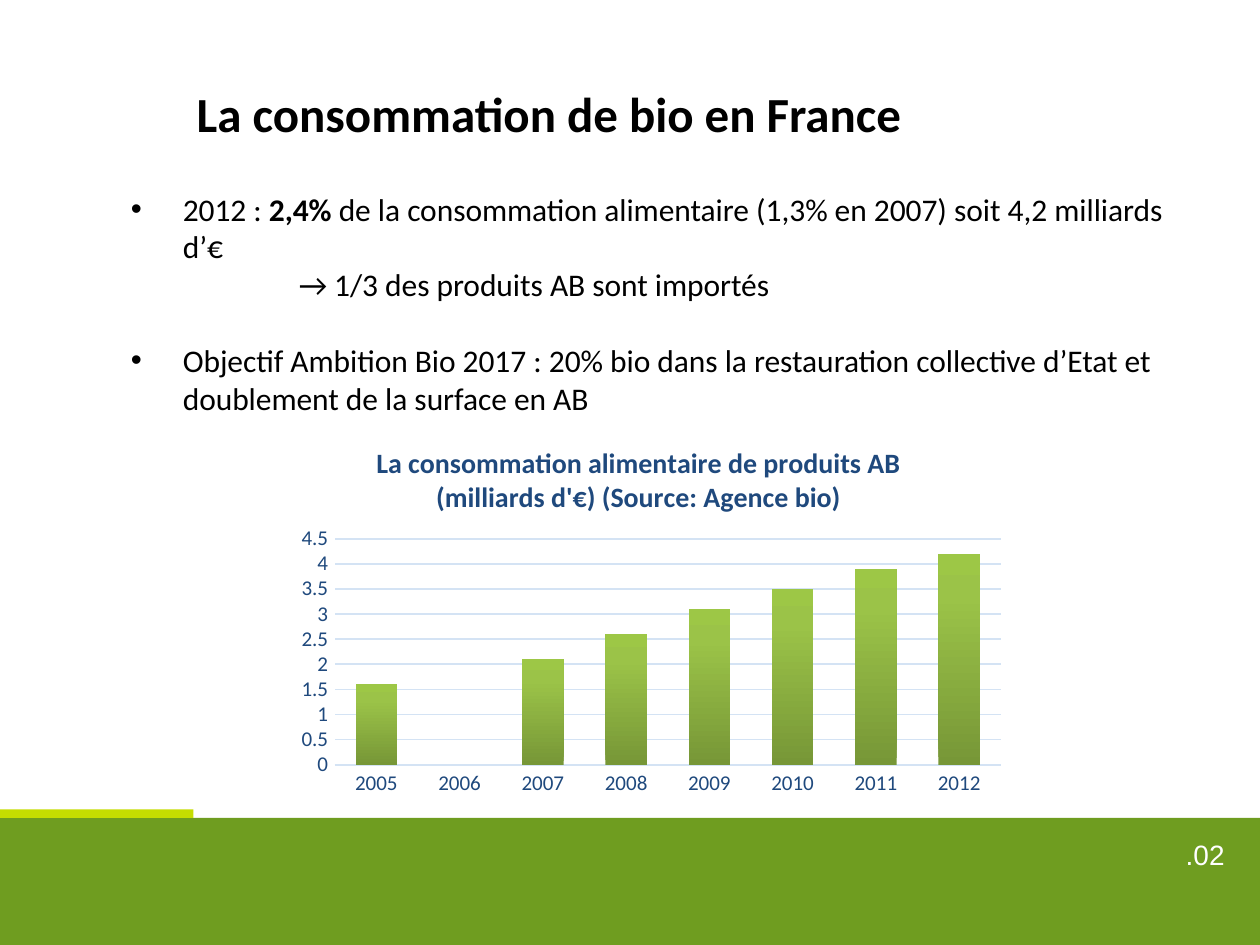
from copy import deepcopy
from dataclasses import dataclass

from lxml.etree import SubElement
from pptx import Presentation
from pptx.chart.data import CategoryChartData
from pptx.dml.color import RGBColor
from pptx.enum.chart import XL_CHART_TYPE, XL_TICK_MARK
from pptx.enum.shapes import MSO_SHAPE
from pptx.enum.text import PP_ALIGN
from pptx.oxml import parse_xml
from pptx.oxml.ns import nsdecls, qn
from pptx.util import Inches, Pt

SLIDE_WIDTH = Inches(7.5)
SLIDE_HEIGHT = SLIDE_WIDTH * 3 // 4


@dataclass(frozen=True)
class Theme:
    """Colours, fonts and type sizes of the slide."""
    text_font: str = "Calibri"
    number_font: str = "Arial"
    ink: str = "000000"
    paper: str = "FFFFFF"
    band: str = "6F9D20"
    accent: str = "C5DD01"
    chart_text: str = "1F497D"
    grid: str = "D4E3F4"
    bar_stops: tuple = ((0, "779737"), (0.8, "9BC348"), (1, "9DC746"))
    title_size: float = 21
    body_size: float = 13.5
    number_size: float = 12
    chart_title_size: float = 12
    axis_size: float = 9


THEME = Theme()


def place(left, top, width, height):
    """Turn percentages of the slide into a position and a size."""
    return (int(SLIDE_WIDTH * left / 100), int(SLIDE_HEIGHT * top / 100),
            int(SLIDE_WIDTH * width / 100), int(SLIDE_HEIGHT * height / 100))


def style_font(font, size, color, name=THEME.text_font, bold=False):
    """Set the face, size, weight and colour of a font."""
    font.name, font.size, font.bold = name, Pt(size), bold
    font.color.rgb = RGBColor.from_string(color)


def add_bar(slide, area, color):
    """Add a plain filled rectangle."""
    bar = slide.shapes.add_shape(MSO_SHAPE.RECTANGLE, *place(*area))
    bar.shadow.inherit = False
    bar.fill.solid()
    bar.fill.fore_color.rgb = RGBColor.from_string(color)
    bar.line.fill.background()


def add_text(slide, area, wrap=True):
    """Add a text box and return its text frame."""
    frame = slide.shapes.add_textbox(*place(*area)).text_frame
    frame.word_wrap = wrap
    return frame


def add_line(slide, area, text, size, color, name=THEME.text_font,
             bold=False, align=PP_ALIGN.LEFT, wrap=True):
    """Add a text box that holds a single paragraph."""
    paragraph = add_text(slide, area, wrap).paragraphs[0]
    paragraph.text, paragraph.alignment = text, align
    style_font(paragraph.font, size, color, name, bold)


def write_body(paragraph, pieces, margin, bullet=False, space_before=0):
    """Fill a body paragraph from (text, bold) pieces."""
    properties = paragraph._p.get_or_add_pPr()
    properties.set("marL", str(Inches(margin)))
    properties.set("indent", str(-Inches(margin) if bullet else 0))
    if bullet:
        SubElement(properties, qn("a:buFont"), typeface="Arial")
        SubElement(properties, qn("a:buChar"), char="•")
    if space_before:
        paragraph.space_before = Pt(space_before)
    style_font(paragraph.font, THEME.body_size, THEME.ink)
    for text, bold in pieces:
        run = paragraph.add_run()
        run.text = text
        if bold:
            run.font.bold = True


def add_body(slide, area):
    """Add the bulleted key figures."""
    frame = add_text(slide, area)
    write_body(frame.paragraphs[0], [
        ("2012 : ", False), ("2,4% ", True),
        ("de la consommation alimentaire (1,3% en 2007) soit 4,2 milliards d’€", False),
    ], 0.31, bullet=True)
    write_body(frame.add_paragraph(),
               [("→ 1/3 des produits AB sont importés", False)], 1)
    write_body(frame.add_paragraph(), [
        ("Objectif Ambition Bio 2017 : 20% bio dans la restauration collective "
         "d’Etat et doublement de la surface en AB", False),
    ], 0.31, bullet=True, space_before=16.4)


def fill_bars(series):
    """Give the bars their vertical gradient."""
    fill = series.format.fill
    fill.gradient()
    fill.gradient_angle = 90
    stop_list = series._element.find(".//" + qn("a:gsLst"))
    stop_list.append(deepcopy(stop_list[-1]))
    for stop, (position, color) in zip(fill.gradient_stops, THEME.bar_stops):
        stop.position = position
        stop.color.rgb = RGBColor.from_string(color)


def style_line(line):
    """Draw an axis or grid line in the pale chart colour."""
    line.color.rgb = RGBColor.from_string(THEME.grid)
    line.width = Pt(0.75)


def fix_layout(element, index, target="", **shares):
    """Fix the place of a chart part as shares of the chart."""
    for layout in element.findall(qn("c:layout")):
        element.remove(layout)
    sizes = "".join(f'<c:{key} val="{value}"/>' for key, value in shares.items())
    element.insert(index, parse_xml(
        f'<c:layout {nsdecls("c")}><c:manualLayout>{target}'
        f'<c:xMode val="edge"/><c:yMode val="edge"/>{sizes}'
        '</c:manualLayout></c:layout>'))


def add_sales_chart(slide, area):
    """Add the column chart of organic food consumption."""
    data = CategoryChartData()
    data.categories = [str(year) for year in range(2005, 2013)]
    data.add_series("Series 1", (1.6, None, 2.1, 2.6, 3.1, 3.5, 3.9, 4.2))
    chart = slide.shapes.add_chart(
        XL_CHART_TYPE.COLUMN_CLUSTERED, *place(*area), data).chart
    style_font(chart.font, THEME.axis_size, THEME.chart_text)
    chart.has_legend = False
    chart.has_title = True
    title = chart.chart_title.text_frame.paragraphs[0]
    title.text = ("La consommation alimentaire de produits AB "
                  "(milliards d'€) (Source: Agence bio)")
    style_font(title.font, THEME.chart_title_size, THEME.chart_text, bold=True)
    for axis in (chart.category_axis, chart.value_axis):
        axis.major_tick_mark = axis.minor_tick_mark = XL_TICK_MARK.NONE
        style_font(axis.tick_labels.font, THEME.axis_size, THEME.chart_text)
    style_line(chart.category_axis.format.line)
    values = chart.value_axis
    values.minimum_scale, values.maximum_scale, values.major_unit = 0, 4.5, 0.5
    values.format.line.fill.background()
    style_line(values.major_gridlines.format.line)
    plot = chart.plots[0]
    plot.vary_by_categories = False
    plot.gap_width, plot.overlap = 100, -24
    fill_bars(plot.series[0])
    fix_layout(chart.chart_title._element, 1, x=0.12, y=0.05)
    fix_layout(chart._chartSpace.chart.plotArea, 0,
               '<c:layoutTarget val="inner"/>', x=0.07, y=0.31, w=0.91, h=0.59)


def main():
    """Build and save the slide."""
    presentation = Presentation()
    presentation.slide_width, presentation.slide_height = SLIDE_WIDTH, SLIDE_HEIGHT
    slide = presentation.slides.add_slide(presentation.slide_layouts[6])
    add_bar(slide, (0, 86.55, 100, 13.45), THEME.band)
    add_bar(slide, (0, 85.65, 15.35, 0.9), THEME.accent)
    add_line(slide, (86.2, 87.8, 12.3, 4.8), ".02", THEME.number_size,
             THEME.paper, THEME.number_font, align=PP_ALIGN.RIGHT)
    add_line(slide, (14.3, 8, 59.2, 8), "La consommation de bio en France",
             THEME.title_size, THEME.ink, bold=True, wrap=False)
    add_body(slide, (9.07, 19.2, 85.1, 26))
    add_sales_chart(slide, (22.5, 44.45, 58.1, 40.55))
    presentation.save("out.pptx")


if __name__ == "__main__":
    main()
